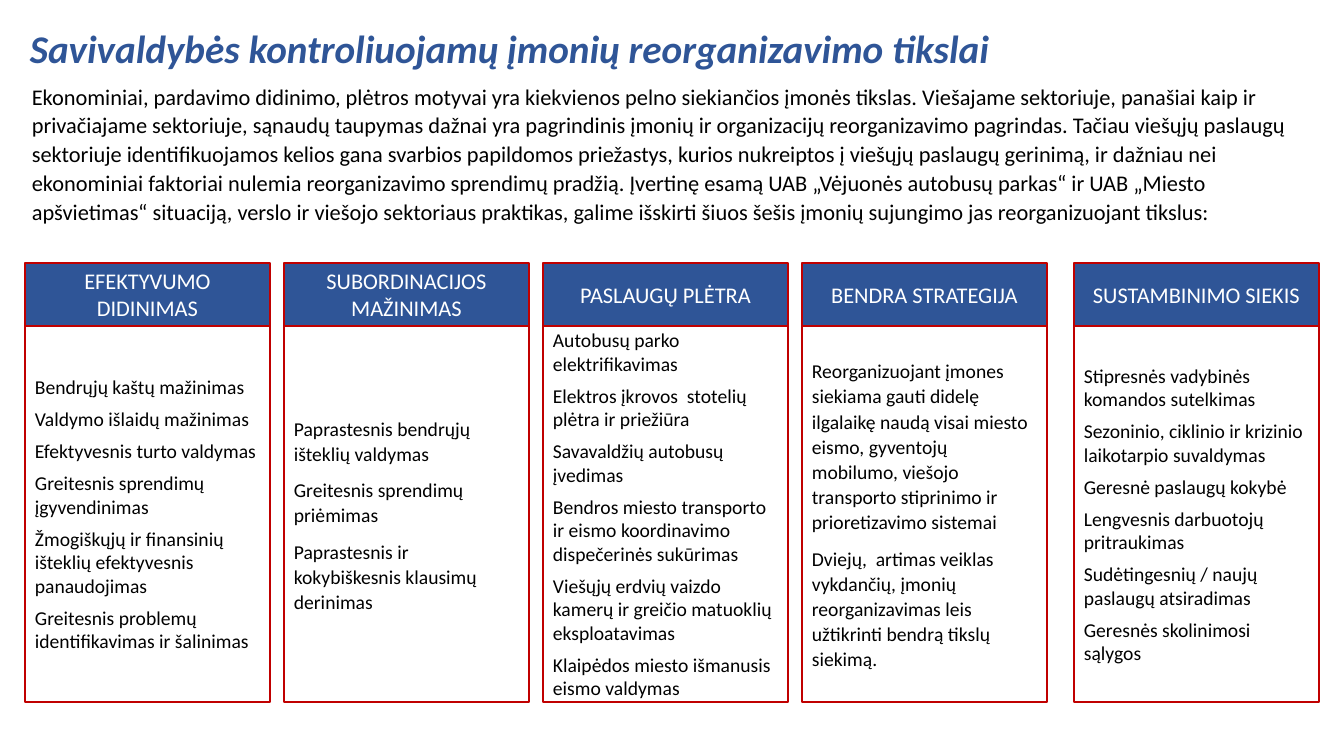
from pptx import Presentation
from pptx import util as u
from pptx.dml.color import RGBColor
from pptx.enum import shapes, text

BLUE = RGBColor(0x2F, 0x55, 0x97)
RED = RGBColor(0xC0, 0x00, 0x00)
BLACK = RGBColor(0x00, 0x00, 0x00)
WHITE = RGBColor(0xFF, 0xFF, 0xFF)
FONT = "Calibri"
PX_PER_INCH = 100.8

TIGHT = {"space_before": u.Pt(6)}
LOOSE = {"line_spacing": 1.07, "space_after": u.Pt(8)}

TITLE = "Savivaldybės kontroliuojamų įmonių reorganizavimo tikslai"
INTRO = (
    "Ekonominiai, pardavimo didinimo, plėtros motyvai yra kiekvienos pelno siekiančios "
    "įmonės tikslas. Viešajame sektoriuje, panašiai kaip ir privačiajame sektoriuje, "
    "sąnaudų taupymas dažnai yra pagrindinis įmonių ir organizacijų reorganizavimo "
    "pagrindas. Tačiau viešųjų paslaugų sektoriuje identifikuojamos kelios gana svarbios "
    "papildomos priežastys, kurios nukreiptos į viešųjų paslaugų gerinimą, ir dažniau nei "
    "ekonominiai faktoriai nulemia reorganizavimo sprendimų pradžią. Įvertinę esamą UAB "
    "„Vėjuonės autobusų parkas“ ir UAB „Miesto apšvietimas“ situaciją, verslo ir viešojo "
    "sektoriaus praktikas, galime išskirti šiuos šešis įmonių sujungimo jas reorganizuojant "
    "tikslus:"
)
GOALS = [
    ("EFEKTYVUMO DIDINIMAS", TIGHT, [
        "Bendrųjų kaštų mažinimas",
        "Valdymo išlaidų mažinimas",
        "Efektyvesnis turto valdymas",
        "Greitesnis sprendimų įgyvendinimas",
        "Žmogiškųjų ir finansinių išteklių efektyvesnis panaudojimas",
        "Greitesnis problemų identifikavimas ir šalinimas",
    ]),
    ("SUBORDINACIJOS MAŽINIMAS", LOOSE, [
        "Paprastesnis bendrųjų išteklių valdymas",
        "Greitesnis sprendimų priėmimas",
        "Paprastesnis ir kokybiškesnis klausimų derinimas",
    ]),
    ("PASLAUGŲ PLĖTRA", TIGHT, [
        "Autobusų parko elektrifikavimas",
        "Elektros įkrovos  stotelių plėtra ir priežiūra",
        "Savavaldžių autobusų įvedimas",
        "Bendros miesto transporto ir eismo koordinavimo dispečerinės sukūrimas",
        "Viešųjų erdvių vaizdo kamerų ir greičio matuoklių eksploatavimas",
        "Klaipėdos miesto išmanusis eismo valdymas",
    ]),
    ("BENDRA STRATEGIJA", LOOSE, [
        "Reorganizuojant įmones siekiama gauti didelę ilgalaikę naudą visai miesto eismo, "
        "gyventojų mobilumo, viešojo transporto stiprinimo ir prioretizavimo sistemai",
        "Dviejų,  artimas veiklas vykdančių, įmonių reorganizavimas leis užtikrinti bendrą "
        "tikslų siekimą.",
    ]),
    ("SUSTAMBINIMO SIEKIS", TIGHT, [
        "Stipresnės vadybinės komandos sutelkimas",
        "Sezoninio, ciklinio ir krizinio laikotarpio suvaldymas",
        "Geresnė paslaugų kokybė",
        "Lengvesnis darbuotojų pritraukimas",
        "Sudėtingesnių / naujų paslaugų atsiradimas",
        "Geresnės skolinimosi sąlygos",
    ]),
]


def px(length):
    return u.Inches(length / PX_PER_INCH)


def write(frame, lines, size, color, align=text.PP_ALIGN.LEFT, spacing=None, emphasis=False):
    """Fill a text frame, one paragraph a line; spacing holds paragraph settings."""
    for index, line in enumerate(lines):
        paragraph = frame.add_paragraph() if index else frame.paragraphs[0]
        paragraph.alignment = align
        for name, value in (spacing or {}).items():
            setattr(paragraph, name, value)
        run = paragraph.add_run()
        run.text = line
        run.font.name = FONT
        run.font.size = u.Pt(size)
        run.font.bold = run.font.italic = emphasis
        run.font.color.rgb = color


def add_text(slide, box, line, size, color, wrap=True, **style):
    frame = slide.shapes.add_textbox(*map(px, box)).text_frame
    frame.word_wrap = wrap
    write(frame, [line], size, color, **style)


def add_panel(slide, box, fill=None):
    """Draw a red-edged rectangle and return its text frame."""
    shape = slide.shapes.add_shape(shapes.MSO_SHAPE.RECTANGLE, *map(px, box))
    shape.shadow.inherit = False
    if fill is None:
        shape.fill.background()
    else:
        shape.fill.solid()
        shape.fill.fore_color.rgb = fill
    shape.line.color.rgb = RED
    shape.line.width = u.Pt(1)
    frame = shape.text_frame
    frame.word_wrap = True
    frame.vertical_anchor = text.MSO_ANCHOR.MIDDLE
    return frame


def add_goal(slide, box, heading, spacing, points):
    left, top, width, height = box
    heading_height = 63
    header = add_panel(slide, (left, top, width, heading_height), BLUE)
    write(header, [heading], 16, WHITE, text.PP_ALIGN.CENTER)
    body = add_panel(slide, (left, top + heading_height, width, height - heading_height))
    write(body, points, 14, BLACK, spacing=spacing)


def add_goals(slide, box):
    """Place the columns at an even pitch, the last flush with the right edge."""
    left, top, width, height = box
    column_width, pitch = 245, 259
    lefts = [left + pitch * index for index in range(len(GOALS) - 1)]
    lefts.append(left + width - column_width)
    for column_left, goal in zip(lefts, GOALS):
        add_goal(slide, (column_left, top, column_width, height), *goal)


def main():
    presentation = Presentation()
    presentation.slide_width = px(1344)
    presentation.slide_height = px(756)
    slide = presentation.slides.add_slide(presentation.slide_layouts[6])
    add_text(slide, (20, 19, 990, 57), TITLE, 28, BLUE, wrap=False, emphasis=True)
    add_text(slide, (22, 76, 1283, 154), INTRO, 16, BLACK, spacing=LOOSE)
    add_goals(slide, (25, 263, 1294, 439))
    presentation.save("out.pptx")


if __name__ == "__main__":
    main()
